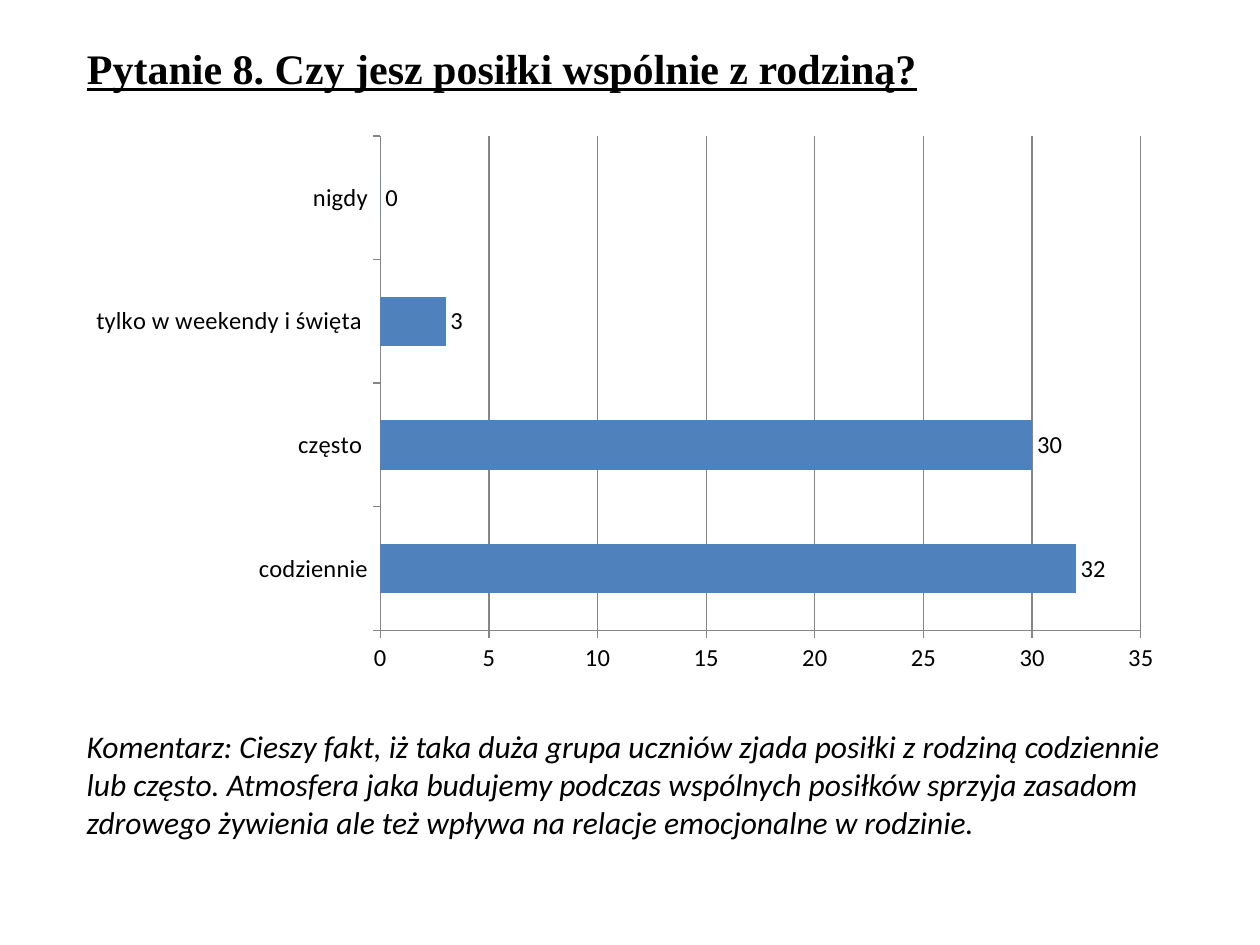
from pptx import Presentation
from pptx.chart.data import CategoryChartData
from pptx.dml.color import RGBColor
from pptx.enum.chart import XL_CHART_TYPE, XL_LABEL_POSITION, XL_TICK_MARK
from pptx.enum.text import MSO_ANCHOR, PP_ALIGN
from pptx.util import Inches, Pt

LEFT, WIDTH = Inches(0.59), Inches(8.9)
BLACK, BLUE, GRAY = "000000", "4F81BD", "868686"

TITLE = "Pytanie 8. Czy jesz posiłki wspólnie z rodziną?"
NOTE = (
    "Komentarz: Cieszy fakt, iż taka duża grupa uczniów zjada posiłki "
    "z rodziną codziennie lub często. Atmosfera jaka budujemy podczas "
    "wspólnych posiłków sprzyja zasadom zdrowego żywienia ale też wpływa "
    "na relacje emocjonalne w rodzinie."
)
MEALS = {"codziennie": 32, "często ": 30, "tylko w weekendy i święta ": 3, "nigdy": 0}


def color(code):
    return RGBColor.from_string(code)


def set_font(font, name, size):
    font.name, font.size = name, Pt(size)
    font.color.rgb = color(BLACK)


def fill_text(shape, text, name, size):
    """Write one left-aligned paragraph and return its font."""
    frame = shape.text_frame
    frame.word_wrap = True
    frame.vertical_anchor = MSO_ANCHOR.TOP
    para = frame.paragraphs[0]
    para.text = text
    para.alignment = PP_ALIGN.LEFT
    set_font(para.font, name, size)
    return para.font


def add_title(slide):
    title = slide.shapes.title
    title.left, title.top = LEFT, Inches(0.29)
    title.width, title.height = WIDTH, Inches(0.5)
    font = fill_text(title, TITLE, "Times New Roman", 24)
    font.bold = font.underline = True


def add_bars(slide):
    data = CategoryChartData()
    data.categories = list(MEALS)
    data.add_series("Series 1", list(MEALS.values()))
    chart = slide.shapes.add_chart(
        XL_CHART_TYPE.BAR_CLUSTERED, LEFT, Inches(0.99),
        Inches(8.74), Inches(4.44), data,
    ).chart
    chart.has_legend = chart.has_title = False
    set_font(chart.font, "Calibri", 14)

    # Axes and grid
    for axis in (chart.category_axis, chart.value_axis):
        axis.major_tick_mark = XL_TICK_MARK.OUTSIDE
        axis.minor_tick_mark = XL_TICK_MARK.NONE
        axis.format.line.color.rgb = color(GRAY)
    scale = chart.value_axis
    scale.minimum_scale, scale.maximum_scale, scale.major_unit = 0, 35, 5
    scale.has_major_gridlines = True
    scale.major_gridlines.format.line.color.rgb = color(GRAY)

    # Bars and their values
    plot = chart.plots[0]
    plot.gap_width = 150
    plot.vary_by_categories = False
    fill = plot.series[0].format.fill
    fill.solid()
    fill.fore_color.rgb = color(BLUE)
    plot.has_data_labels = True
    labels = plot.data_labels
    labels.show_value = True
    labels.position = XL_LABEL_POSITION.OUTSIDE_END
    set_font(labels.font, "Calibri", 14)


def add_note(slide):
    box = slide.shapes.add_textbox(LEFT, Inches(5.72), WIDTH, Inches(1.01))
    fill_text(box, NOTE, "Calibri", 18).italic = True


def main():
    deck = Presentation()
    deck.slide_width, deck.slide_height = Inches(10), Inches(7.5)
    slide = deck.slides.add_slide(deck.slide_layouts[5])
    add_title(slide)
    add_bars(slide)
    add_note(slide)
    deck.save("out.pptx")


if __name__ == "__main__":
    main()
